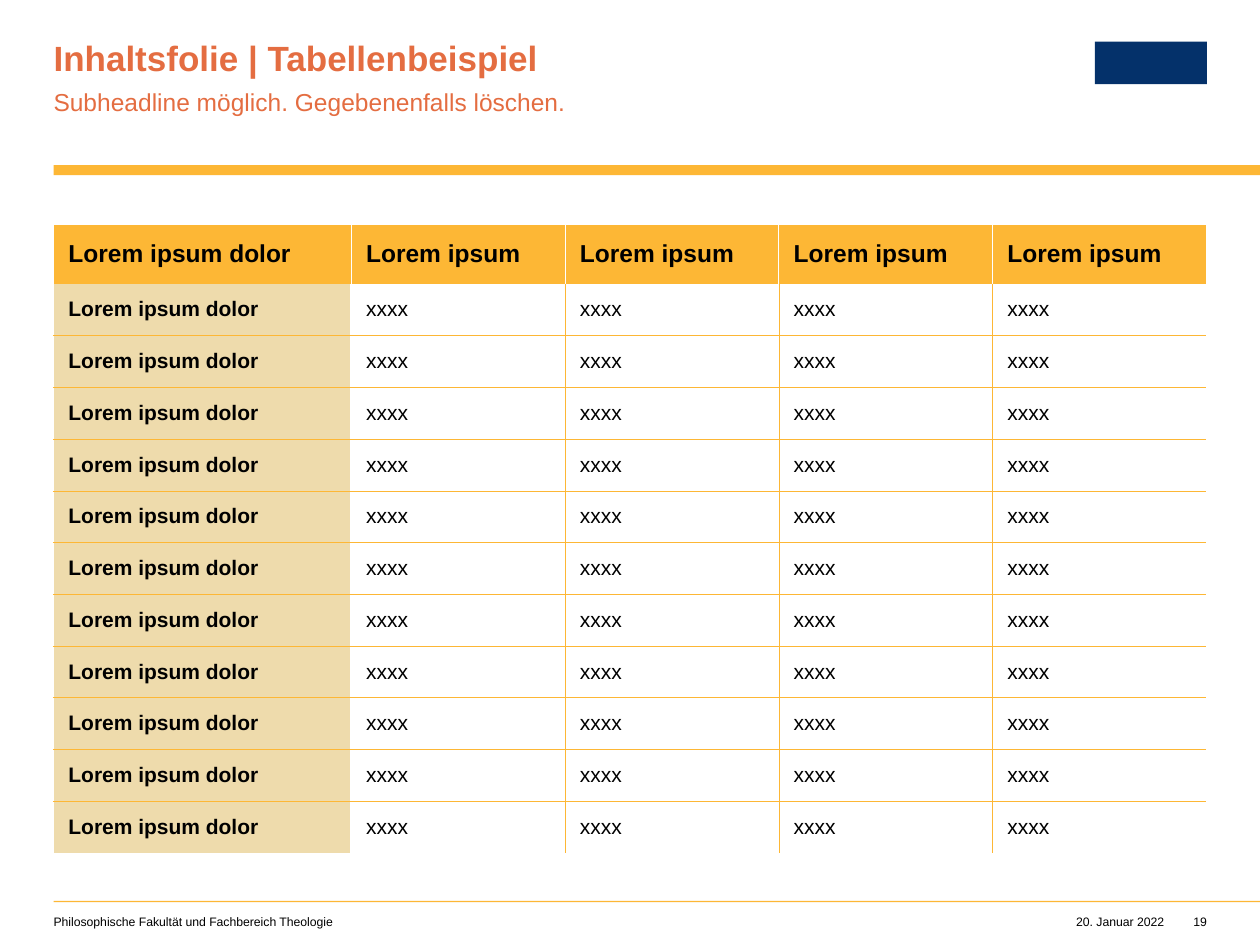
from dataclasses import dataclass

import lxml.etree
import pptx
import pptx.dml.color
import pptx.enum.shapes
import pptx.enum.text
import pptx.oxml.ns
import pptx.util

Cm = pptx.util.Cm
Pt = pptx.util.Pt
Align = pptx.enum.text.PP_ALIGN
Anchor = pptx.enum.text.MSO_ANCHOR
NO_GRID_STYLE = "{2D5ABB26-0587-4C30-8999-92F81FD0307C}"


@dataclass(frozen=True)
class Theme:
    font: str = "Arial"
    amber: str = "FDB735"
    sand: str = "EEDBAC"
    orange: str = "E46D41"
    navy: str = "04316A"
    black: str = "000000"
    white: str = "FFFFFF"
    title_size: float = 20
    heading_size: float = 14
    body_size: float = 12
    footer_size: float = 7


@dataclass(frozen=True)
class Area:
    left: float
    top: float
    width: float
    height: float

    def lengths(self) -> tuple:
        return tuple(Cm(n) for n in (self.left, self.top, self.width, self.height))


@dataclass(frozen=True)
class Label:
    text: str
    area: Area
    size: float
    color: str
    align: Align = Align.LEFT
    wrap: bool = True
    spacing: float = 1.0


@dataclass(frozen=True)
class Border:
    side: str
    color: str
    width: float


THEME = Theme()
PAGE_WIDTH, PAGE_HEIGHT = 25.4, 19.05
MARGIN = 1.08
BAR_WIDTH = PAGE_WIDTH - MARGIN
FOOTER_TOP = 18.44

# Coloured areas: thick header bar, thin footer rule, plain block for the logo
BLOCKS = [
    (Area(MARGIN, 3.33, BAR_WIDTH, 0.2), THEME.amber),
    (Area(MARGIN, 18.16, BAR_WIDTH, 0.03), THEME.amber),
    (Area(22.07, 0.84, 2.26, 0.86), THEME.navy),
]

TITLE = Label("Inhaltsfolie | Tabellenbeispiel", Area(MARGIN, 0.84, 14.25, 0.76),
              THEME.title_size, THEME.orange, spacing=0.9)
LABELS = [
    Label("Subheadline möglich. Gegebenenfalls löschen.", Area(MARGIN, 1.7, 14.25, 0.61),
          THEME.heading_size, THEME.orange, spacing=1.1),
    Label("20. Januar 2022", Area(21.67, FOOTER_TOP, 1.8, 0.3),
          THEME.footer_size, THEME.black, Align.RIGHT, wrap=False),
    Label("Philosophische Fakultät und Fachbereich Theologie",
          Area(MARGIN, FOOTER_TOP, 11.4, 0.3), THEME.footer_size, THEME.black),
    Label("19", Area(23.82, FOOTER_TOP, 0.51, 0.3),
          THEME.footer_size, THEME.black, Align.RIGHT, wrap=False),
]

TABLE_AREA = Area(MARGIN, 4.53, 23.24, 12.67)
FIRST_COLUMN, HEADER_HEIGHT = 6.0, 1.19
ROW_LABEL = "Lorem ipsum dolor"
TABLE_ROWS = [[ROW_LABEL] + ["Lorem ipsum"] * 4] + [[ROW_LABEL] + ["xxxx"] * 4] * 11


def rgb(color: str) -> pptx.dml.color.RGBColor:
    return pptx.dml.color.RGBColor.from_string(color)


def set_font(para, size: float, color: str, bold: bool = False) -> None:
    font = para.font
    font.name, font.size, font.bold = THEME.font, Pt(size), bold
    font.color.rgb = rgb(color)


def draw_block(page, area: Area, color: str) -> None:
    block = page.shapes.add_shape(pptx.enum.shapes.MSO_SHAPE.RECTANGLE, *area.lengths())
    block.shadow.inherit = False
    block.fill.solid()
    block.fill.fore_color.rgb = rgb(color)
    block.line.fill.background()


def fill_label(box, label: Label, bold: bool = False) -> None:
    box.left, box.top, box.width, box.height = label.area.lengths()
    frame = box.text_frame
    frame.margin_left = frame.margin_right = frame.margin_top = frame.margin_bottom = 0
    frame.vertical_anchor = Anchor.TOP
    frame.word_wrap = label.wrap
    frame.auto_size = pptx.enum.text.MSO_AUTO_SIZE.NONE
    frame.text = label.text
    para = frame.paragraphs[0]
    para.alignment, para.line_spacing = label.align, label.spacing
    set_font(para, label.size, label.color, bold)


def cell_borders(row: int, column: int, last_row: int, last_column: int) -> list[Border]:
    """Borders in schema order: left, right, top, bottom."""
    def upright(edge: int) -> tuple[str, float]:
        if edge == 0:
            return THEME.white, 1
        if row == 0:
            return THEME.white, 0.5
        return (THEME.white, 1) if edge == 1 else (THEME.amber, 0.25)

    borders = [Border("L", *upright(column))]
    if column < last_column:
        borders.append(Border("R", *upright(column + 1)))
    if row == 0:
        borders.append(Border("T", THEME.white, 1))
    if row > 1:
        borders.append(Border("T", THEME.amber, 0.25))
    if 0 < row < last_row:
        borders.append(Border("B", THEME.amber, 0.25))
    return borders


def draw_border(cell, border: Border) -> None:
    qn = pptx.oxml.ns.qn
    properties = cell._tc.get_or_add_tcPr()
    line = lxml.etree.SubElement(properties, qn(f"a:ln{border.side}"), w=str(Pt(border.width)))
    solid = lxml.etree.SubElement(line, qn("a:solidFill"))
    lxml.etree.SubElement(solid, qn("a:srgbClr"), val=border.color)


def draw_cell(cell, text: str, row: int, column: int, borders: list[Border]) -> None:
    for border in borders:
        draw_border(cell, border)
    if row == 0 or column == 0:
        cell.fill.solid()
        cell.fill.fore_color.rgb = rgb(THEME.amber if row == 0 else THEME.sand)
    else:
        cell.fill.background()
    cell.vertical_anchor = Anchor.MIDDLE
    cell.margin_left = cell.margin_right = Cm(0.3)
    cell.margin_top = cell.margin_bottom = Cm(0.1)
    cell.text = text
    size = THEME.heading_size if row == 0 else THEME.body_size
    set_font(cell.text_frame.paragraphs[0], size, THEME.black, row == 0 or column == 0)


def draw_table(page, rows: list[list[str]], area: Area) -> None:
    last_row, last_column = len(rows) - 1, len(rows[0]) - 1
    table = page.shapes.add_table(len(rows), len(rows[0]), *area.lengths()).table
    table.first_row = table.horz_banding = False
    table._tbl.tblPr.find(pptx.oxml.ns.qn("a:tableStyleId")).text = NO_GRID_STYLE
    for index, column in enumerate(table.columns):
        column.width = Cm(FIRST_COLUMN if index == 0
                          else (area.width - FIRST_COLUMN) / last_column)
    for index, row in enumerate(table.rows):
        row.height = Cm(HEADER_HEIGHT if index == 0
                        else (area.height - HEADER_HEIGHT) / last_row)
    for r, texts in enumerate(rows):
        for c, text in enumerate(texts):
            draw_cell(table.cell(r, c), text, r, c, cell_borders(r, c, last_row, last_column))


def main() -> None:
    deck = pptx.Presentation()
    deck.slide_width, deck.slide_height = Cm(PAGE_WIDTH), Cm(PAGE_HEIGHT)
    page = deck.slides.add_slide(deck.slide_layouts[5])

    # Bars and logo block
    for area, color in BLOCKS:
        draw_block(page, area, color)

    # Title, subheadline and footer
    fill_label(page.shapes.title, TITLE, bold=True)
    for label in LABELS:
        fill_label(page.shapes.add_textbox(*label.area.lengths()), label)

    # Table
    draw_table(page, TABLE_ROWS, TABLE_AREA)
    deck.save("out.pptx")


if __name__ == "__main__":
    main()
